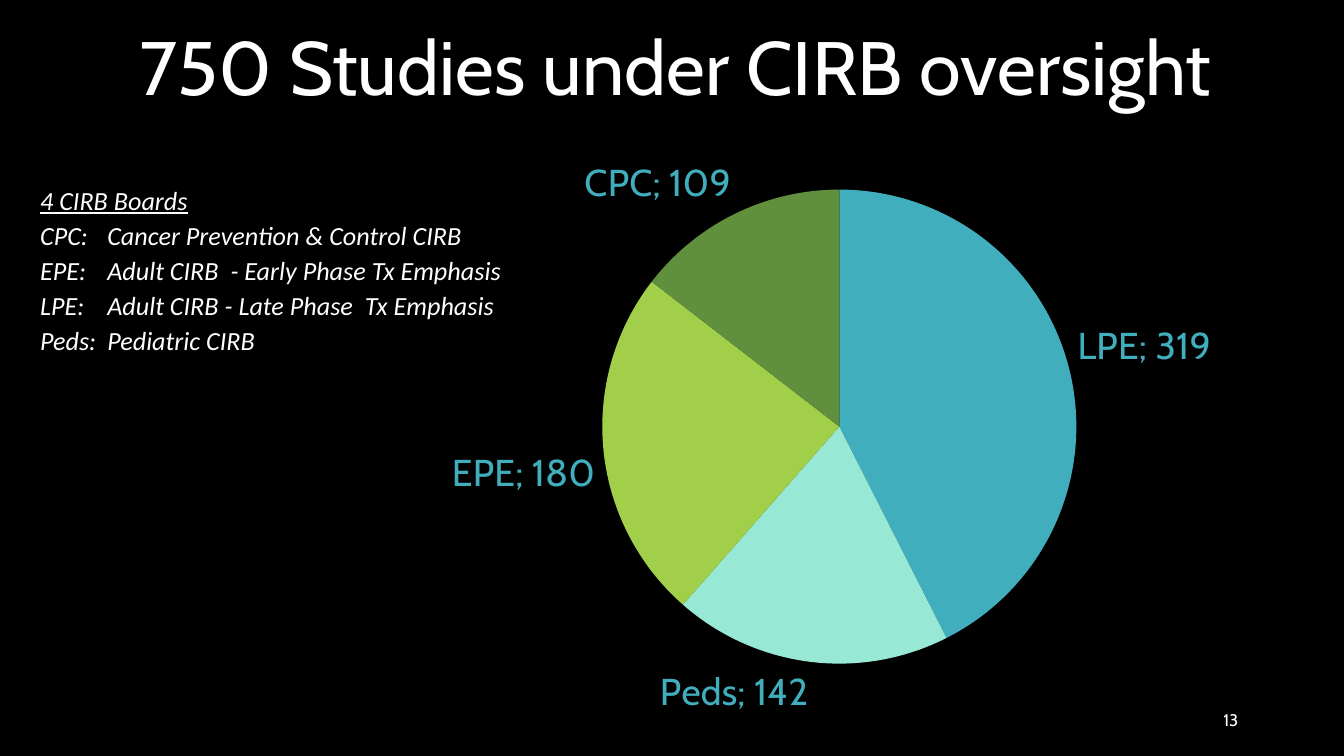
from lxml.etree import SubElement
from pptx import Presentation
from pptx.chart.data import CategoryChartData
from pptx.dml.color import RGBColor
from pptx.enum.chart import XL_CHART_TYPE, XL_LABEL_POSITION
from pptx.enum.text import MSO_ANCHOR, MSO_AUTO_SIZE, PP_ALIGN
from pptx.oxml import parse_xml
from pptx.oxml.ns import nsdecls, qn
from pptx.util import Pt

BLACK = RGBColor(0, 0, 0)
WHITE = RGBColor(255, 255, 255)
TEAL = RGBColor(0x41, 0xAE, 0xBD)
MINT = RGBColor(0x97, 0xE9, 0xD5)
LIME = RGBColor(0xA2, 0xCF, 0x49)
GREEN = RGBColor(0x60, 0x8F, 0x3D)


def style(font, name, size, color):
    font.name = name
    font.size = Pt(size)
    font.color.rgb = color


deck = Presentation()
deck.slide_width, deck.slide_height = Pt(720), Pt(405)
slide = deck.slides.add_slide(deck.slide_layouts[5])
slide.background.fill.solid()
slide.background.fill.fore_color.rgb = BLACK

title = slide.shapes.title
title.left, title.top, title.width, title.height = Pt(67.5), Pt(-1), Pt(621), Pt(78.5)
frame = title.text_frame
frame.text = "750 Studies under CIRB oversight"
frame.auto_size = MSO_AUTO_SIZE.NONE
frame.vertical_anchor = MSO_ANCHOR.MIDDLE
para = frame.paragraphs[0]
para.alignment = PP_ALIGN.LEFT
para.line_spacing = 0.9
style(para.runs[0].font, "Cabin", 40.5, WHITE)

number = slide.shapes.add_textbox(Pt(508.5), Pt(375), Pt(162), Pt(21.5))
frame = number.text_frame
frame.word_wrap = True
frame.vertical_anchor = MSO_ANCHOR.MIDDLE
frame.text = "13"
para = frame.paragraphs[0]
para.alignment = PP_ALIGN.RIGHT
style(para.runs[0].font, "Cabin", 9, WHITE)

data = CategoryChartData()
data.categories = ["LPE", "Peds", "EPE", "CPC"]
data.add_series("Series 1", [319, 142, 180, 109])
chart = slide.shapes.add_chart(
    XL_CHART_TYPE.PIE, Pt(111), Pt(70.5), Pt(672), Pt(324), data).chart
chart.has_legend = False
chart.has_title = False
style(chart.font, "Cabin", 10, WHITE)
plot = chart.plots[0]
plot.vary_by_categories = True
for index, color in enumerate([TEAL, MINT, LIME, GREEN]):
    fill = plot.series[0].points[index].format.fill
    fill.solid()
    fill.fore_color.rgb = color
plot.has_data_labels = True
labels = plot.data_labels
labels.show_category_name = True
labels.show_value = True
labels.show_percentage = False
labels.position = XL_LABEL_POSITION.OUTSIDE_END
style(labels.font, "Cabin", 20, TEAL)

area = chart.element.find(".//" + qn("c:plotArea"))
for old in area.findall(qn("c:layout")):
    area.remove(old)
layout = parse_xml(f"<c:layout {nsdecls('c')}/>")
manual = SubElement(layout, qn("c:manualLayout"))
for tag, val in [("layoutTarget", "inner"), ("xMode", "edge"), ("yMode", "edge"),
                 ("x", "0.315"), ("y", "0.096"), ("w", "0.378"), ("h", "0.784")]:
    SubElement(manual, qn("c:" + tag)).set("val", val)
area.insert(0, layout)

boards = slide.shapes.add_textbox(Pt(14.4), Pt(95), Pt(363.6), Pt(100))
frame = boards.text_frame
frame.word_wrap = True
frame.text = "\n".join([
    "4 CIRB Boards",
    "CPC:\tCancer Prevention & Control CIRB",
    "EPE: \tAdult CIRB  - Early Phase Tx Emphasis",
    "LPE: \tAdult CIRB - Late Phase  Tx Emphasis",
    "Peds:\tPediatric CIRB",
])
for index, para in enumerate(frame.paragraphs):
    para.space_after = Pt(2)
    tabs = SubElement(para._p.get_or_add_pPr(), qn("a:tabLst"))
    SubElement(tabs, qn("a:tab"), pos=str(Pt(36)), algn="l")
    for run in para.runs:
        style(run.font, "Calibri", 14, WHITE)
        run.font.italic = True
        run.font.underline = index == 0

deck.save("out.pptx")
